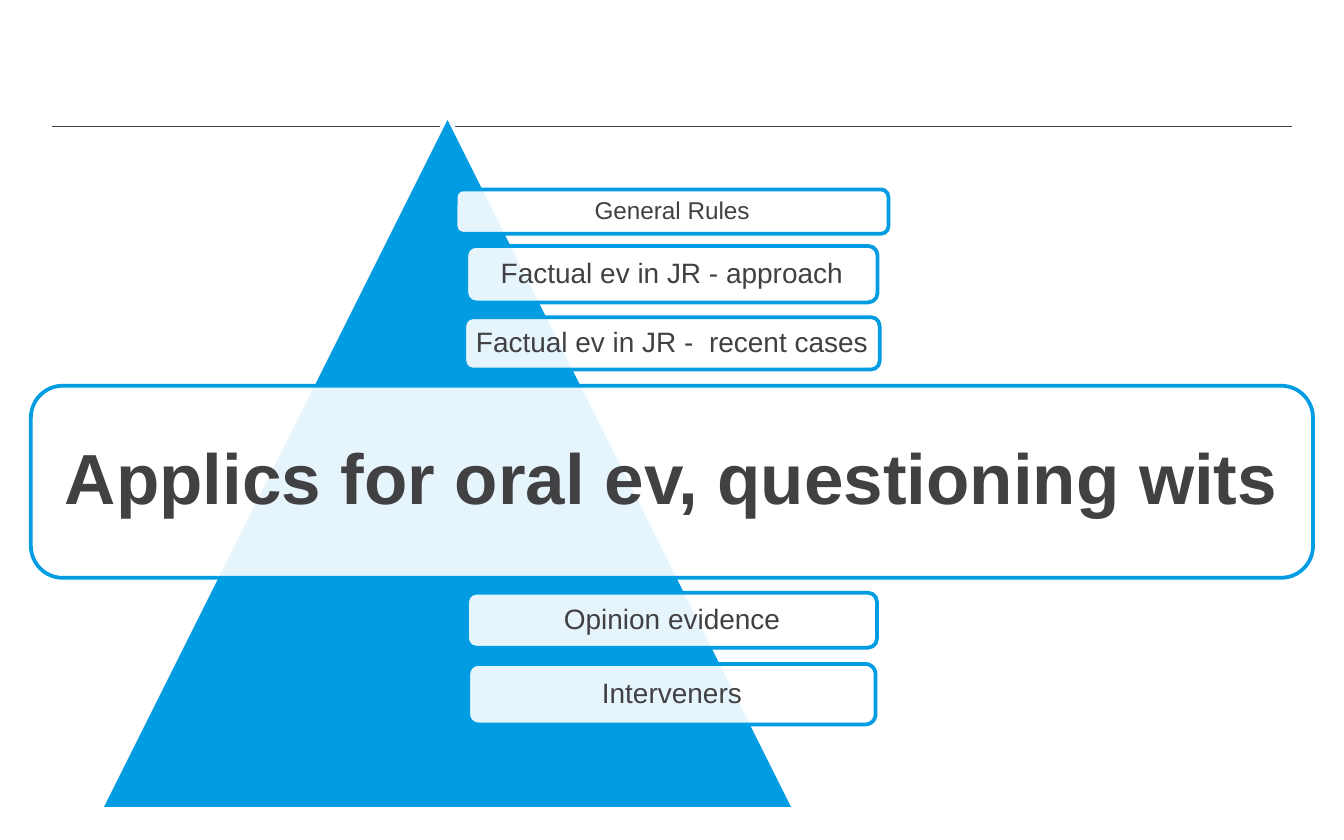
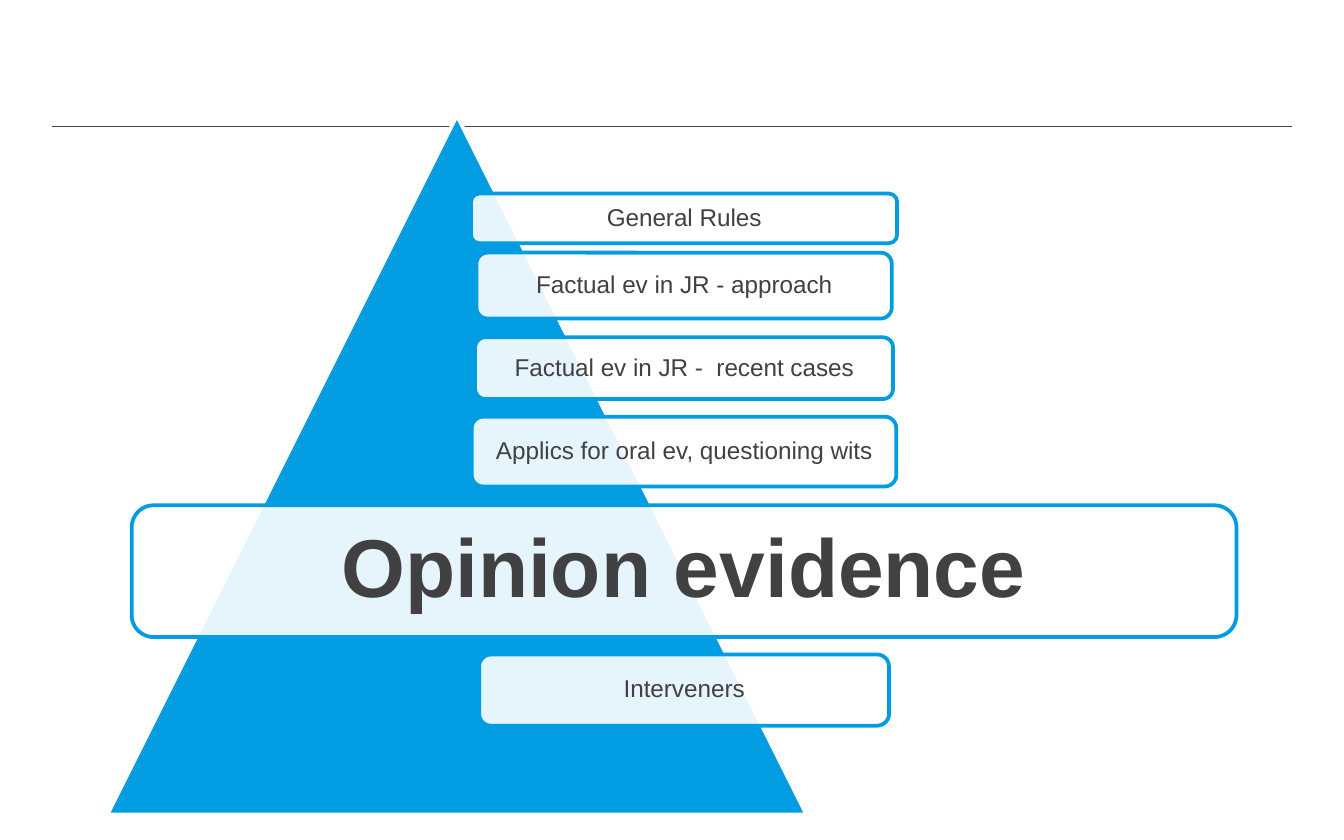
from lxml import etree
from pptx import Presentation
from pptx.dml.color import RGBColor
from pptx.enum import shapes, text
from pptx.oxml.ns import qn
from pptx.util import Inches, Pt

COLOURS = {"blue": "029CE2", "white": "FFFFFF", "ink": "414042"}
FONT = "Arial"
BOX_OPACITY = 90

TOPICS = [
    "General Rules",
    "Factual ev in JR - approach",
    "Factual ev in JR -  recent cases",
    "Applics for oral ev, questioning wits",
    "Opinion evidence",
    "Interveners",
]

# Each box is (width, top, height, text size, inset); all share one centre line.
SLIDES = [
    {
        "triangle": (0.75, 0.86, 5.16),
        "centre": 5.0,
        "current": "Applics for oral ev, questioning wits",
        "boxes": [
            (3.22, 1.41, 0.33, 13, 0.05),
            (3.06, 1.83, 0.42, 15, 0.06),
            (3.09, 2.36, 0.39, 15, 0.06),
            (9.54, 2.87, 1.43, 38, 0.16),
            (3.05, 4.41, 0.41, 15, 0.06),
            (3.03, 4.94, 0.45, 15, 0.06),
        ],
    },
    {
        "triangle": (0.8, 0.86, 5.2),
        "centre": 5.09,
        "current": "Opinion evidence",
        "boxes": [
            (3.17, 1.44, 0.37, 13, 0.05),
            (3.09, 1.88, 0.49, 13, 0.05),
            (3.11, 2.51, 0.46, 13, 0.05),
            (3.16, 3.1, 0.52, 13, 0.05),
            (8.22, 3.76, 0.98, 44, 0.18),
            (3.05, 4.87, 0.53, 13, 0.05),
        ],
    },
]


def rgb(name):
    return RGBColor.from_string(COLOURS[name])


def add_filled(slide, kind, left, top, width, height, fill, line):
    sp = slide.shapes.add_shape(
        kind, Inches(left), Inches(top), Inches(width), Inches(height))
    sp.shadow.inherit = False
    sp.fill.solid()
    sp.fill.fore_color.rgb = rgb(fill)
    sp.line.color.rgb = rgb(line)
    sp.line.width = Pt(2)
    return sp


prs = Presentation()
prs.slide_width, prs.slide_height = Inches(10), Inches(6.25)

for content in SLIDES:
    s = prs.slides.add_slide(prs.slide_layouts[6])
    s.background.fill.solid()
    s.background.fill.fore_color.rgb = rgb("white")

    rule = s.shapes.add_connector(
        shapes.MSO_CONNECTOR.STRAIGHT,
        Inches(0.39), Inches(0.94), Inches(9.61), Inches(0.94))
    rule.line.color.rgb = rgb("ink")
    rule.line.width = Pt(0.75)
    etree.SubElement(rule._element.spPr, qn("a:effectLst"))

    left, top, side = content["triangle"]
    add_filled(s, shapes.MSO_SHAPE.ISOSCELES_TRIANGLE,
               left, top, side, side, "blue", "white")

    for topic, box in zip(TOPICS, content["boxes"]):
        width, top, height, size, inset = box
        sp = add_filled(s, shapes.MSO_SHAPE.ROUNDED_RECTANGLE,
                        content["centre"] - width / 2, top, width, height,
                        "white", "blue")
        fill_colour = sp._element.spPr.find(qn("a:solidFill"))[0]
        etree.SubElement(fill_colour, qn("a:alpha"), val=str(BOX_OPACITY * 1000))

        tf = sp.text_frame
        tf.text = topic
        tf.word_wrap = True
        tf.vertical_anchor = text.MSO_ANCHOR.MIDDLE
        tf.margin_left = tf.margin_right = Inches(inset)
        tf.margin_top = tf.margin_bottom = Inches(inset)
        p = tf.paragraphs[0]
        p.alignment = text.PP_ALIGN.CENTER
        p.line_spacing = 0.9
        r = p.runs[0]
        r.font.name = FONT
        r.font.size = Pt(size)
        r.font.bold = topic == content["current"]
        r.font.color.rgb = rgb("ink")

prs.save("out.pptx")
